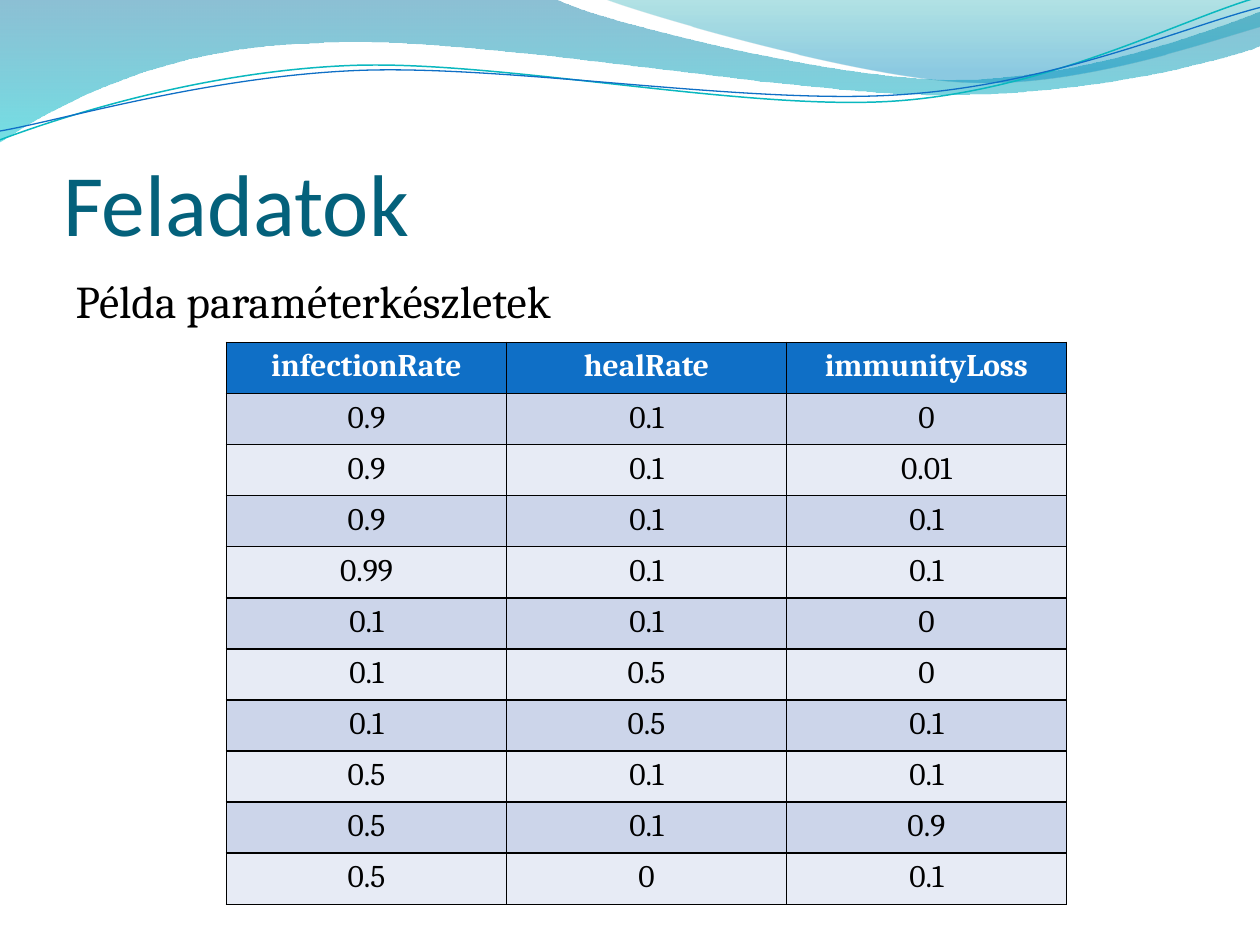
import math
from dataclasses import dataclass

from lxml import etree
from pptx import Presentation
from pptx import util as u
from pptx.dml.color import RGBColor
from pptx.enum import text
from pptx.oxml.ns import qn

WIDTH, HEIGHT = u.Inches(10), u.Inches(7.5)
ROW_HEIGHT, COLUMN_WIDTH = u.Pt(29.2), u.Pt(160)
BLACK, WHITE, BLUE, TEAL = "000000", "FFFFFF", "0F6FC6", "04617B"
BANDS = ("CCD5EA", "E7EBF5")


@dataclass(frozen=True)
class Stop:
    position: float
    colour: str
    opacity: int


@dataclass(frozen=True)
class Wave:
    """Points in inches; a segment has one point (line) or three (Bézier curve)."""
    start: tuple
    segments: tuple
    stops: tuple = ()
    line: str = ""
    weight: float = 0
    centre: tuple = (0, 0)
    tilt: float = 0


WAVES = (
    Wave((0, 0), (
        ((4.4, -0.01),),
        ((4.76, 0.17), (6.64, 0.63), (7.58, 0.63)),
        ((8.53, 0.63), (9.58, 0.26), (10, 0.09)),
        ((10.01, 0.36),),
        ((9.83, 0.44), (8.7, 0.76), (7.46, 0.75)),
        ((6.22, 0.75), (3.82, 0.28), (2.57, 0.34)),
        ((1.29, 0.36), (0.46, 0.83), (-0.01, 1.13)),
        ((0, 0),),
    ), stops=(Stop(0, "0074A1", 45), Stop(1, "00C6CF", 55))),
    Wave((4.79, -0.01), (
        ((5.09, 0.11), (6.82, 0.62), (7.69, 0.65)),
        ((8.56, 0.69), (9.61, 0.32), (10, 0.21)),
        ((10, 0),),
        ((4.79, -0.01),),
    ), stops=(Stop(0, "00A1A9", 30), Stop(0.8, "008BBF", 45))),
    Wave((0, 1.11), (
        ((0.48, 0.93), (1.58, 0.57), (2.77, 0.52)),
        ((3.95, 0.47), (5.93, 0.89), (7.13, 0.8)),
        ((8.33, 0.71), (9.38, 0.15), (9.98, -0.02)),
    ), line="0AB8BF", weight=0.85, centre=(4.99, 0.58), tilt=-2.7),
    Wave((0, 1.04), (
        ((0.47, 0.96), (1.64, 0.61), (2.83, 0.56)),
        ((4.03, 0.51), (5.97, 0.84), (7.17, 0.75)),
        ((8.36, 0.67), (9.41, 0.21), (10, 0.06)),
    ), line=BLUE, weight=0.75, centre=(5, 0.59), tilt=-2.7),
)

HEADINGS = ("infectionRate", "healRate", "immunityLoss")
PARAMETERS = (
    ("0.9", "0.1", "0"),
    ("0.9", "0.1", "0.01"),
    ("0.9", "0.1", "0.1"),
    ("0.99", "0.1", "0.1"),
    ("0.1", "0.1", "0"),
    ("0.1", "0.5", "0"),
    ("0.1", "0.5", "0.1"),
    ("0.5", "0.1", "0.1"),
    ("0.5", "0.1", "0.9"),
    ("0.5", "0", "0.1"),
)


def rgb(colour: str) -> RGBColor:
    return RGBColor.from_string(colour)


def place(shape, left: float, top: float, width: float, height: float) -> None:
    """Position a shape by shares of the slide's size."""
    shape.left, shape.width = int(left * WIDTH), int(width * WIDTH)
    shape.top, shape.height = int(top * HEIGHT), int(height * HEIGHT)


def style(para, size: float, face: str, colour: str, bold: bool = False) -> None:
    font = para.font
    font.size, font.name, font.bold = u.Pt(size), face, bold
    font.color.rgb = rgb(colour)


def level(wave: Wave, point: tuple) -> tuple:
    """Undo the wave's tilt, which the shape's rotation brings back; give EMU."""
    angle = math.radians(-wave.tilt)
    dx, dy = (value - middle for value, middle in zip(point, wave.centre))
    x = wave.centre[0] + dx * math.cos(angle) - dy * math.sin(angle)
    y = wave.centre[1] + dx * math.sin(angle) + dy * math.cos(angle)
    return u.Inches(x), u.Inches(y)


def bend(shape, segments: tuple) -> None:
    """Turn each three straight steps of a curved segment into one Bézier curve."""
    steps = iter(list(shape.element.iter(qn("a:lnTo"))))
    for segment in segments:
        group = [next(steps) for _ in segment]
        if len(group) == 3:
            curve = etree.Element(qn("a:cubicBezTo"))
            group[0].addprevious(curve)
            for step in group:
                curve.append(step[0])
                step.getparent().remove(step)


def draw_wave(page, wave: Wave) -> None:
    builder = page.shapes.build_freeform(*level(wave, wave.start))
    points = [level(wave, point) for segment in wave.segments for point in segment]
    builder.add_line_segments(points, close=bool(wave.stops))
    shape = builder.convert_to_shape()
    bend(shape, wave.segments)
    shape.rotation = wave.tilt
    shape.shadow.inherit = False
    if wave.stops:
        shape.line.fill.background()
        shape.fill.gradient()
        shape.fill.gradient_angle = 270
        for target, stop in zip(shape.fill.gradient_stops, wave.stops):
            target.position = stop.position
            target.color.rgb = rgb(stop.colour)
        for colour, stop in zip(shape.element.iter(qn("a:srgbClr")), wave.stops):
            etree.SubElement(colour, qn("a:alpha"), val=str(stop.opacity * 1000))
    else:
        shape.fill.background()
        shape.line.color.rgb = rgb(wave.line)
        shape.line.width = u.Pt(wave.weight)


def fill_title(title) -> None:
    place(title, 0.05, 0.102, 0.9, 0.167)
    frame = title.text_frame
    frame.text = "Feladatok"
    frame.auto_size = text.MSO_AUTO_SIZE.NONE
    frame.vertical_anchor = text.MSO_ANCHOR.BOTTOM
    frame.margin_left = frame.margin_right = frame.margin_bottom = 0
    para = frame.paragraphs[0]
    para.alignment = text.PP_ALIGN.LEFT
    style(para, 50, "Calibri", TEAL)


def fill_body(body) -> None:
    place(body, 0.05, 0.282, 0.9, 0.64)
    frame = body.text_frame
    frame.text = "Példa paraméterkészletek"
    frame.auto_size = text.MSO_AUTO_SIZE.NONE
    para = frame.paragraphs[0]
    para.space_before = u.Pt(5.2)
    style(para, 26, "Cambria", BLACK)
    properties = para.font._element.getparent()
    properties.set("marL", "0")
    properties.set("indent", "0")
    para.font._element.addprevious(etree.Element(qn("a:buNone")))


def fill_cell(cell, words: str, fill: str, colour: str, bold: bool) -> None:
    cell.text = words
    para = cell.text_frame.paragraphs[0]
    para.alignment = text.PP_ALIGN.CENTER
    style(para, 18, "Cambria", colour, bold)
    properties = cell._tc.get_or_add_tcPr()
    for side in ("lnL", "lnR", "lnT", "lnB"):
        border = etree.SubElement(properties, qn(f"a:{side}"), w=str(u.Pt(1)))
        solid = etree.SubElement(border, qn("a:solidFill"))
        etree.SubElement(solid, qn("a:srgbClr"), val=BLACK)
    cell.fill.solid()
    cell.fill.fore_color.rgb = rgb(fill)


def add_parameters(page) -> None:
    rows = (HEADINGS, *PARAMETERS)
    table = page.shapes.add_table(
        len(rows), len(HEADINGS), u.Pt(129.4), u.Pt(195.6),
        COLUMN_WIDTH * len(HEADINGS), ROW_HEIGHT * len(rows)).table
    for index, row in enumerate(rows):
        heading = index == 0
        fill = BLUE if heading else BANDS[(index - 1) % 2]
        for column, words in enumerate(row):
            fill_cell(table.cell(index, column), words, fill,
                      WHITE if heading else BLACK, heading)


def main() -> None:
    deck = Presentation()
    deck.slide_width, deck.slide_height = WIDTH, HEIGHT
    page = deck.slides.add_slide(deck.slide_layouts[1])
    title, body = page.placeholders
    for wave in WAVES:
        draw_wave(page, wave)
    for holder, fill in ((title, fill_title), (body, fill_body)):
        fill(holder)
        holder.element.getparent().append(holder.element)  # in front of the waves
    add_parameters(page)
    deck.save("out.pptx")


if __name__ == "__main__":
    main()
